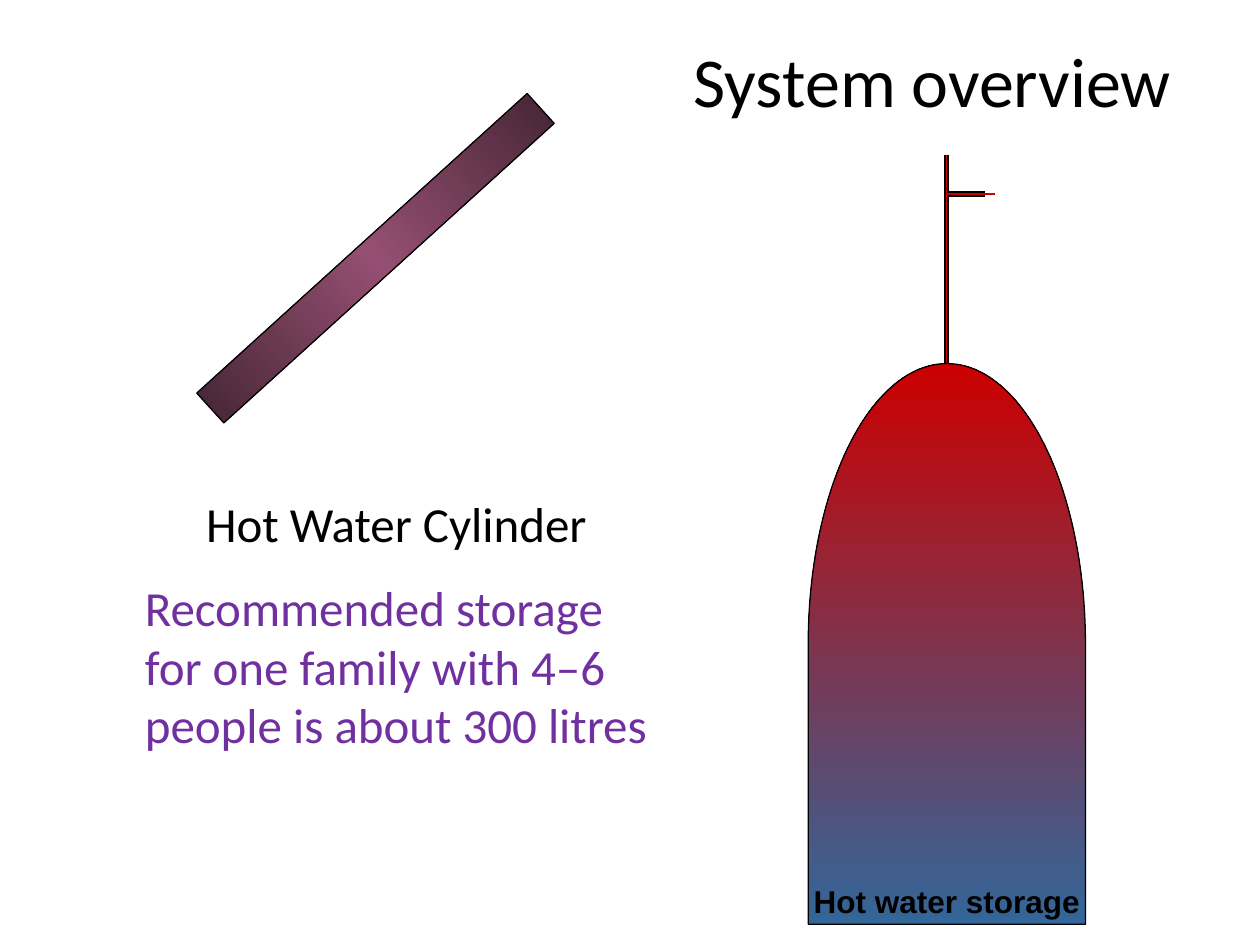
from lxml import etree
from pptx import Presentation
from pptx.dml.color import RGBColor
from pptx.enum.shapes import MSO_CONNECTOR, MSO_SHAPE
from pptx.enum.text import MSO_ANCHOR, MSO_AUTO_SIZE, PP_ALIGN
from pptx.oxml import parse_xml
from pptx.oxml.ns import nsdecls, qn
from pptx.util import Inches, Pt

RECT = MSO_SHAPE.RECTANGLE
DELAY = MSO_SHAPE.FLOWCHART_DELAY
STRAIGHT = MSO_CONNECTOR.STRAIGHT
TOP = MSO_ANCHOR.TOP
FIXED = MSO_AUTO_SIZE.NONE
LEFT, CENTER, RIGHT = PP_ALIGN.LEFT, PP_ALIGN.CENTER, PP_ALIGN.RIGHT

BLACK, RED, BLUE, PURPLE = "000000", "CC0000", "336699", "7030A0"
PLUM, DARK = "954F72", "452535"


def color(code):
    return RGBColor.from_string(code)


class Board:
    """Holds the text style and the current slide."""

    font = "Calibri"

    def __init__(self, slide):
        self.slide = slide

    def style(self, para, size, code=BLACK, font=None, bold=False):
        for run in para.runs:
            run.font.name = font or self.font
            run.font.size = Pt(size)
            run.font.bold = bold
            run.font.color.rgb = color(code)

    def place(self, holder, box):
        """Move a placeholder and return its text frame."""
        holder.left, holder.top, holder.width, holder.height = map(Inches, box)
        frame = holder.text_frame
        frame.word_wrap = True
        frame.auto_size = FIXED
        frame.vertical_anchor = TOP
        return frame

    def title(self, text, box):
        frame = self.place(self.slide.shapes.title, box)
        frame.text = text
        para = frame.paragraphs[0]
        para.alignment = RIGHT
        self.style(para, 40)

    def body(self, items, box, size):
        """Fill the body with unbulleted (text, alignment, colour) items."""
        frame = self.place(self.slide.placeholders[1], box)
        frame.text = "\n".join(item[0] for item in items)
        for i, (para, item) in enumerate(zip(frame.paragraphs, items)):
            props = para._p.get_or_add_pPr()
            props.set("marL", "0")
            props.set("indent", "0")
            etree.SubElement(props, qn("a:buNone"))
            para.alignment = item[1]
            para.space_before = Pt(size / 2 if i else 0)
            self.style(para, size, item[2])

    def label(self, text, box, size, font):
        frame = self.slide.shapes.add_textbox(*map(Inches, box)).text_frame
        frame.word_wrap = False
        frame.text = text
        self.style(frame.paragraphs[0], size, font=font, bold=True)

    def shape(self, kind, box, turn, stops, angle):
        """Add a turned shape with evenly spaced gradient stops."""
        shape = self.slide.shapes.add_shape(kind, *map(Inches, box))
        shape.rotation = turn
        shape.shadow.inherit = False
        shape.line.color.rgb = color(BLACK)
        shape.line.width = Pt(0.75)
        step = 100000 // (len(stops) - 1)
        marks = "".join(
            f'<a:gs pos="{i * step}"><a:srgbClr val="{code}"/></a:gs>'
            for i, code in enumerate(stops))
        shape.element.spPr.find(qn("a:prstGeom")).addnext(parse_xml(
            f'<a:gradFill {nsdecls("a")} rotWithShape="1">'
            f'<a:gsLst>{marks}</a:gsLst>'
            f'<a:lin ang="{angle * 60000}" scaled="0"/></a:gradFill>'))

    def line(self, start, end, code, width):
        line = self.slide.shapes.add_connector(
            STRAIGHT, *map(Inches, start + end))
        line.line.color.rgb = color(code)
        line.line.width = Pt(width)
        etree.SubElement(line.element.spPr, qn("a:effectLst"))


def main():
    deck = Presentation()
    deck.slide_width, deck.slide_height = Inches(10), Inches(7.5)
    board = Board(deck.slides.add_slide(deck.slide_layouts[1]))

    board.title("System overview ", (4.4, 0.25, 5.12, 0.77))
    board.body([
        ("Hot Water Cylinder", CENTER, BLACK),
        ("Recommended storage for one family with 4–6 people "
         "is about 300 litres", LEFT, PURPLE),
    ], (1.05, 3.87, 4.19, 2.69), 28)

    # Tilted bar
    board.shape(RECT, (2.82, 0.28, 0.32, 3.54), 47.8, (DARK, PLUM, DARK), 90)

    # Upright line and side branch: thin red over thick black
    x, branch = 7.51, 1.54
    for code, width, end in ((BLACK, 3, 7.82), (RED, 0.75, 7.9)):
        board.line((x, 1.23), (x, 2.88), code, width)
        board.line((x, branch), (end, branch), code, width)

    # Hot water storage
    board.shape(DELAY, (5.29, 4.01, 4.45, 2.2), 270, (BLUE, RED), 0)
    board.label("Hot water storage", (6.36, 6.95, 2.31, 0.4), 18, "Arial")

    deck.save("out.pptx")


if __name__ == "__main__":
    main()
